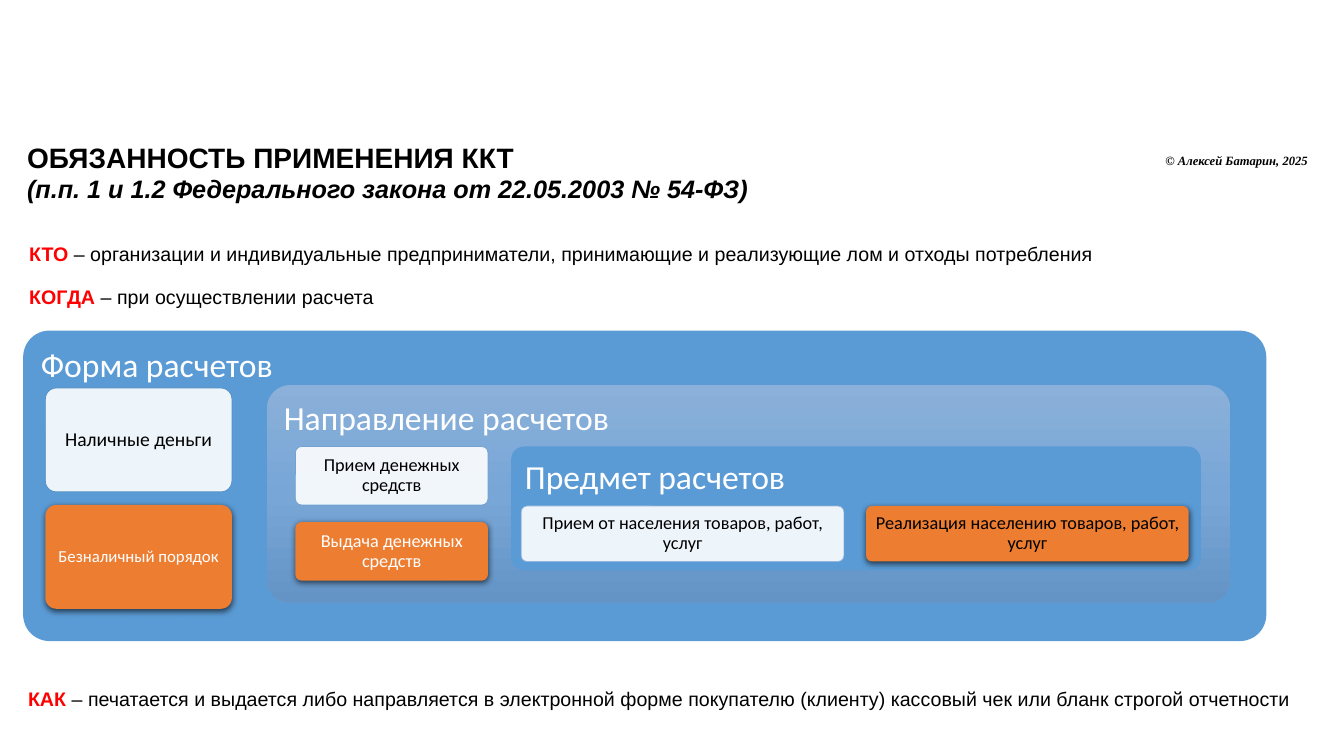
from lxml.etree import SubElement
from pptx import Presentation
from pptx.dml.color import RGBColor
from pptx.enum.shapes import MSO_SHAPE
from pptx.enum.text import MSO_ANCHOR, MSO_AUTO_SIZE, PP_ALIGN
from pptx.oxml.ns import qn
from pptx.util import Inches, Pt

BLACK = RGBColor(0x00, 0x00, 0x00)
WHITE = RGBColor(0xFF, 0xFF, 0xFF)
RED = RGBColor(0xFF, 0x00, 0x00)
BLUE = RGBColor(0x5B, 0x9B, 0xD5)
ORANGE = RGBColor(0xED, 0x7D, 0x31)
TOP = RGBColor(0x8B, 0xB0, 0xD9)
MIDDLE = RGBColor(0x77, 0xA6, 0xD7)
BOTTOM = RGBColor(0x64, 0x93, 0xC5)
EDGE = RGBColor(0x53, 0x8D, 0xC1)
RIM = RGBColor(0x73, 0xA1, 0xD0)
BORDER = RGBColor(0x94, 0xB6, 0xDD)


def apply(target, values):
    for name, value in values.items():
        setattr(target, name, value)


def add(parent, tag, **values):
    return SubElement(parent, qn(tag), values)


class Deck:
    head = {"name": "Calibri", "size": Pt(24)}
    label = {"name": "Calibri", "size": Pt(13)}
    body = {"name": "Arial", "size": Pt(14)}

    def __init__(self):
        self.show = Presentation()
        apply(self.show, {"slide_width": Inches(13.33), "slide_height": Inches(7.5)})
        self.slide = self.show.slides.add_slide(self.show.slide_layouts[6])

    def words(self, line, text, color, font):
        run = line.add_run()
        run.text = text
        apply(run.font, font)
        run.font.color.rgb = color

    def text(self, box, wrap=True, grow=True):
        frame = self.slide.shapes.add_textbox(*map(Inches, box)).text_frame
        fit = MSO_AUTO_SIZE.SHAPE_TO_FIT_TEXT if grow else MSO_AUTO_SIZE.NONE
        apply(frame, {"word_wrap": wrap, "auto_size": fit})
        return frame.paragraphs[0]

    def fact(self, box, key, text, wrap=True):
        line = self.text(box, wrap)
        self.words(line, key, RED, self.body | {"bold": True})
        self.words(line, text, BLACK, self.body)

    def block(self, box, text, color, font, pad, adjust=0.105):
        shape = self.slide.shapes.add_shape(MSO_SHAPE.ROUNDED_RECTANGLE, *map(Inches, box))
        shape.adjustments[0] = adjust
        shape.shadow.inherit = False
        shape.line.fill.background()
        frame = shape.text_frame
        sides = ("left", "top", "right", "bottom")
        apply(frame, {f"margin_{side}": Inches(pad) for side in sides})
        frame.word_wrap = True
        line = frame.paragraphs[0]
        line.line_spacing = 0.9
        self.words(line, text, color, font)
        return shape

    def panel(self, box, text, adjust=0.105, stops=()):
        shape = self.block(box, text, WHITE, self.head, 0.1, adjust)
        shape.text_frame.vertical_anchor = MSO_ANCHOR.TOP
        shape.text_frame.paragraphs[0].alignment = PP_ALIGN.LEFT
        if not stops:
            shape.fill.solid()
            shape.fill.fore_color.rgb = BLUE
            return
        shape.fill.gradient()
        shape.fill.gradient_angle = 270
        ramp = shape.element.spPr.find(qn("a:gradFill")).find(qn("a:gsLst"))
        for old in list(ramp):
            ramp.remove(old)
        for place, color in stops:
            stop = add(ramp, "a:gs", pos=str(place * 1000))
            add(stop, "a:srgbClr", val=str(color))

    def card(self, box, text, color, edge=None, size=13, pad=0.05):
        shape = self.block(box, text, color, self.label | {"size": Pt(size)}, pad)
        shape.text_frame.vertical_anchor = MSO_ANCHOR.MIDDLE
        shape.text_frame.paragraphs[0].alignment = PP_ALIGN.CENTER
        shape.fill.solid()
        shape.fill.fore_color.rgb = WHITE if edge else ORANGE
        props = shape.element.spPr
        if edge:
            shape.line.color.rgb = edge
            shape.line.width = Pt(0.5)
            add(props.find(qn("a:solidFill"))[0], "a:alpha", val="90000")
        else:
            shade = add(props.find(qn("a:effectLst")), "a:outerShdw",
                        blurRad=str(Pt(4.5)), dist=str(Pt(1.5)),
                        dir="5400000", algn="ctr", rotWithShape="0")
            add(add(shade, "a:srgbClr", val=str(BLACK)), "a:alpha", val="63000")


def main():
    deck = Deck()
    deck.panel((0.23, 3.28, 12.33, 3.08), "Форма расчетов", 0.085)
    deck.card((0.45, 3.85, 1.85, 1.03), "Наличные деньги", BLACK, EDGE, 14, 0.06)
    deck.card((0.45, 5.01, 1.85, 1.03), "Безналичный порядок", WHITE, size=12)
    deck.panel((2.65, 3.82, 9.55, 2.16), "Направление расчетов",
               stops=((0, TOP), (50, MIDDLE), (100, BOTTOM)))
    deck.card((2.93, 4.43, 1.91, 0.58), "Прием денежных средств", BLACK, RIM)
    deck.card((2.93, 5.18, 1.91, 0.58), "Выдача денежных средств", WHITE)
    deck.panel((5.07, 4.43, 6.84, 1.23), "Предмет расчетов")
    deck.card((5.17, 5.02, 3.2, 0.55), "Прием от населения товаров, работ, услуг", BLACK, BORDER)
    deck.card((8.59, 5.02, 3.2, 0.55), "Реализация населению товаров, работ, услуг", BLACK)

    title = deck.text((0.17, 1.34, 9.58, 0.62), grow=False)
    bold = {"name": "Arial", "bold": True}
    deck.words(title, "ОБЯЗАННОСТЬ ПРИМЕНЕНИЯ ККТ", BLACK, bold | {"size": Pt(20)})
    title.add_line_break()
    deck.words(title, "(п.п. 1 и 1.2 Федерального закона от 22.05.2003 № 54-ФЗ)", BLACK,
               bold | {"size": Pt(18), "italic": True})

    deck.fact((0.19, 2.35, 12.84, 0.34), "КТО",
              " – организации и индивидуальные предприниматели, "
              "принимающие и реализующие лом и отходы потребления")
    credit = deck.text((11.46, 1.47, 1.69, 0.25))
    deck.words(credit, "© Алексей Батарин, 2025", BLACK,
               {"name": "Times New Roman", "size": Pt(9), "bold": True, "italic": True})
    deck.fact((0.19, 2.78, 3.69, 0.34), "КОГДА", " – при осуществлении расчета", False)
    deck.fact((0.18, 6.77, 12.74, 0.34), "КАК",
              " – печатается и выдается либо направляется в электронной форме "
              "покупателю (клиенту) кассовый чек или бланк строгой отчетности")
    deck.show.save("out.pptx")


if __name__ == "__main__":
    main()
